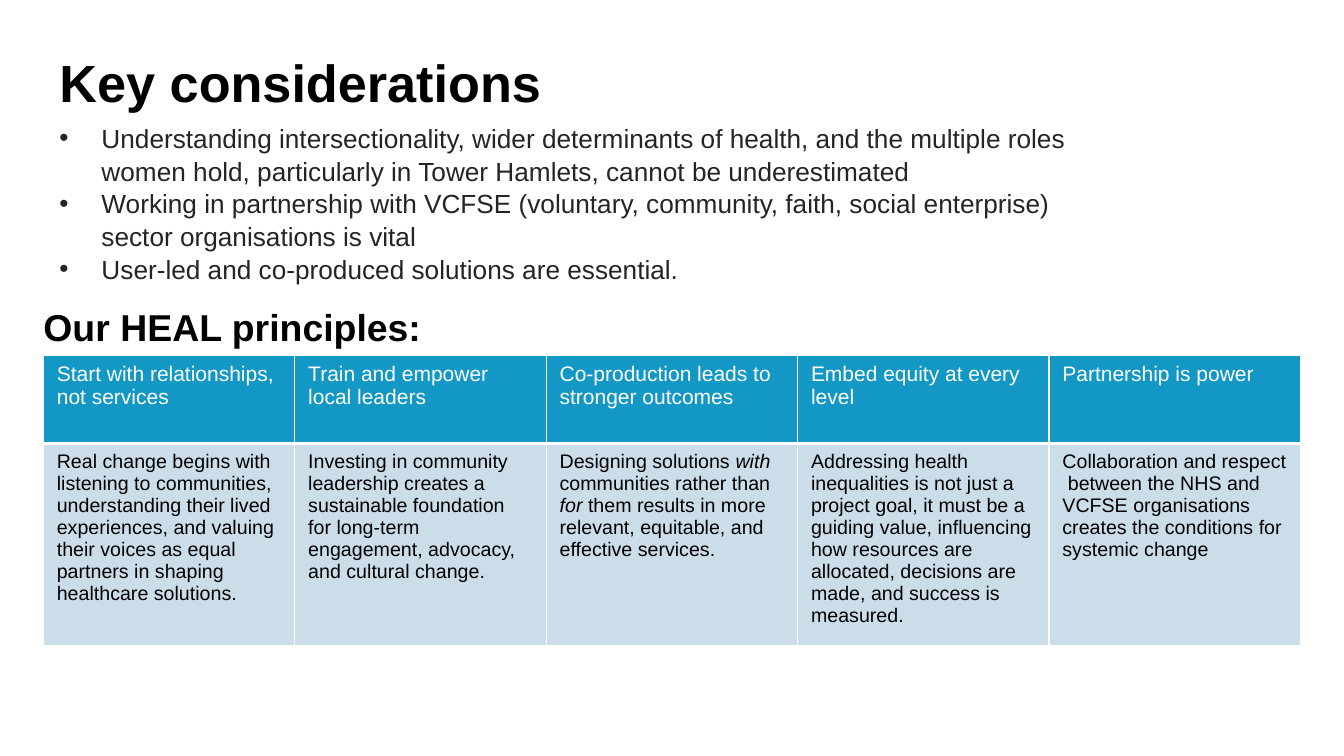
from lxml.etree import SubElement
from pptx import Presentation
from pptx.dml.color import RGBColor
from pptx.enum.text import MSO_ANCHOR as ANCHOR, MSO_AUTO_SIZE as FIT
from pptx.oxml.ns import qn
from pptx.util import Pt

CONSIDERATIONS = [
    "Understanding intersectionality, wider determinants of health, and the multiple roles "
    "women hold, particularly in Tower Hamlets, cannot be underestimated",
    "Working in partnership with VCFSE (voluntary, community, faith, social enterprise) "
    "sector organisations is vital",
    "User-led and co-produced solutions are essential.",
]
PRINCIPLES = [
    ("Start with relationships, not services",
     "Real change begins with listening to communities, understanding their lived experiences, "
     "and valuing their voices as equal partners in shaping healthcare solutions."),
    ("Train and empower local leaders",
     "Investing in community leadership creates a sustainable foundation for long-term "
     "engagement, advocacy, and cultural change."),
    ("Co-production leads to stronger outcomes",
     "Designing solutions *with* communities rather than *for* them results in more relevant, "
     "equitable, and effective services. "),
    ("Embed equity at every level",
     "Addressing health inequalities is not just a project goal, it must be a guiding value, "
     "influencing how resources are allocated, decisions are made, and success is measured."),
    ("Partnership is power",
     "Collaboration and respect  between the NHS and VCFSE organisations creates the "
     "conditions for systemic change"),
]


def rgb(value):
    return RGBColor.from_string(value)


def write(p, text, size=14, color="000000", bold=False, font="Arial"):
    for i, part in enumerate(text.split("*")):
        r = p.add_run()
        r.text = part
        r.font.name, r.font.size = font, Pt(size)
        r.font.bold, r.font.italic = bold, i % 2 == 1
        r.font.color.rgb = rgb(color)


class Deck:
    """Holds the presentation, its table style and the current slide."""

    header_fill, body_fill, rule = "1398C5", "CCDDEA", "FFFFFF"

    def __init__(self, width, height):
        self.prs = Presentation()
        self.prs.slide_width, self.prs.slide_height = Pt(width), Pt(height)
        self.s = self.prs.slides.add_slide(self.prs.slide_layouts[3])

    def fill_placeholder(self, index, box, lines, spacing, bullet=None, **fmt):
        sp = self.s.placeholders[index]
        sp.left, sp.top, sp.width, sp.height = map(Pt, box)
        tf = sp.text_frame
        tf.margin_left = tf.margin_top = tf.margin_right = tf.margin_bottom = 0
        tf.word_wrap, tf.auto_size = True, FIT.SHAPE_TO_FIT_TEXT
        tf.vertical_anchor = ANCHOR.TOP
        for i, line in enumerate(lines):
            p = tf.add_paragraph() if i else tf.paragraphs[0]
            self.set_bullet(p, bullet)
            p.line_spacing, p.space_before = spacing, Pt(0)
            write(p, line, **fmt)
        return sp

    def set_bullet(self, p, char, indent=30):
        pPr = p._p.get_or_add_pPr()
        pPr.set("algn", "l")
        pPr.set("marL", str(Pt(indent) if char else 0))
        pPr.set("indent", str(-Pt(indent) if char else 0))
        if char:
            SubElement(pPr, qn("a:buFont"), typeface="Arial")
            SubElement(pPr, qn("a:buChar"), char=char)
        else:
            SubElement(pPr, qn("a:buNone"))

    def table(self, left, top, col_width, row_heights, columns):
        frame = self.s.shapes.add_table(len(row_heights), len(columns), Pt(left), Pt(top),
                                        Pt(col_width * len(columns)), Pt(sum(row_heights)))
        table = frame.table
        for row, height in zip(table.rows, row_heights):
            row.height = Pt(height)
        for c, (heading, detail) in enumerate(columns):
            table.columns[c].width = Pt(col_width)
            self.cell(table.cell(0, c), heading, self.header_fill, {"B": 3},
                      size=15, color="FFFFFF")
            self.cell(table.cell(1, c), detail, self.body_fill, {"T": 3})

    def cell(self, cell, text, fill, thick, **fmt):
        cell.margin_left = cell.margin_right = Pt(9.6)
        cell.margin_top = cell.margin_bottom = Pt(4.8)
        tcPr = cell._tc.get_or_add_tcPr()
        for side in "LRTB":
            ln = SubElement(tcPr, qn(f"a:ln{side}"), w=str(Pt(thick.get(side, 1))))
            SubElement(SubElement(ln, qn("a:solidFill")), qn("a:srgbClr"), val=self.rule)
        cell.fill.solid()
        cell.fill.fore_color.rgb = rgb(fill)
        write(cell.text_frame.paragraphs[0], text, **fmt)


def main():
    deck = Deck(960, 540)
    deck.fill_placeholder(0, (42.5, 31.7, 773, 25), ["Key considerations"], 1.1,
                          size=37.3, bold=True)
    deck.fill_placeholder(1, (42.5, 86.4, 739, 38), CONSIDERATIONS, 1.04, bullet="•",
                          size=18.7, color="242424")
    deck.table(31, 254.2, 179.6, (62.6, 144), PRINCIPLES)
    deck.fill_placeholder(2, (31, 215.3, 614, 18), ["Our HEAL principles:"], 1.06,
                          size=26.7, bold=True)
    deck.prs.save("out.pptx")


if __name__ == "__main__":
    main()
